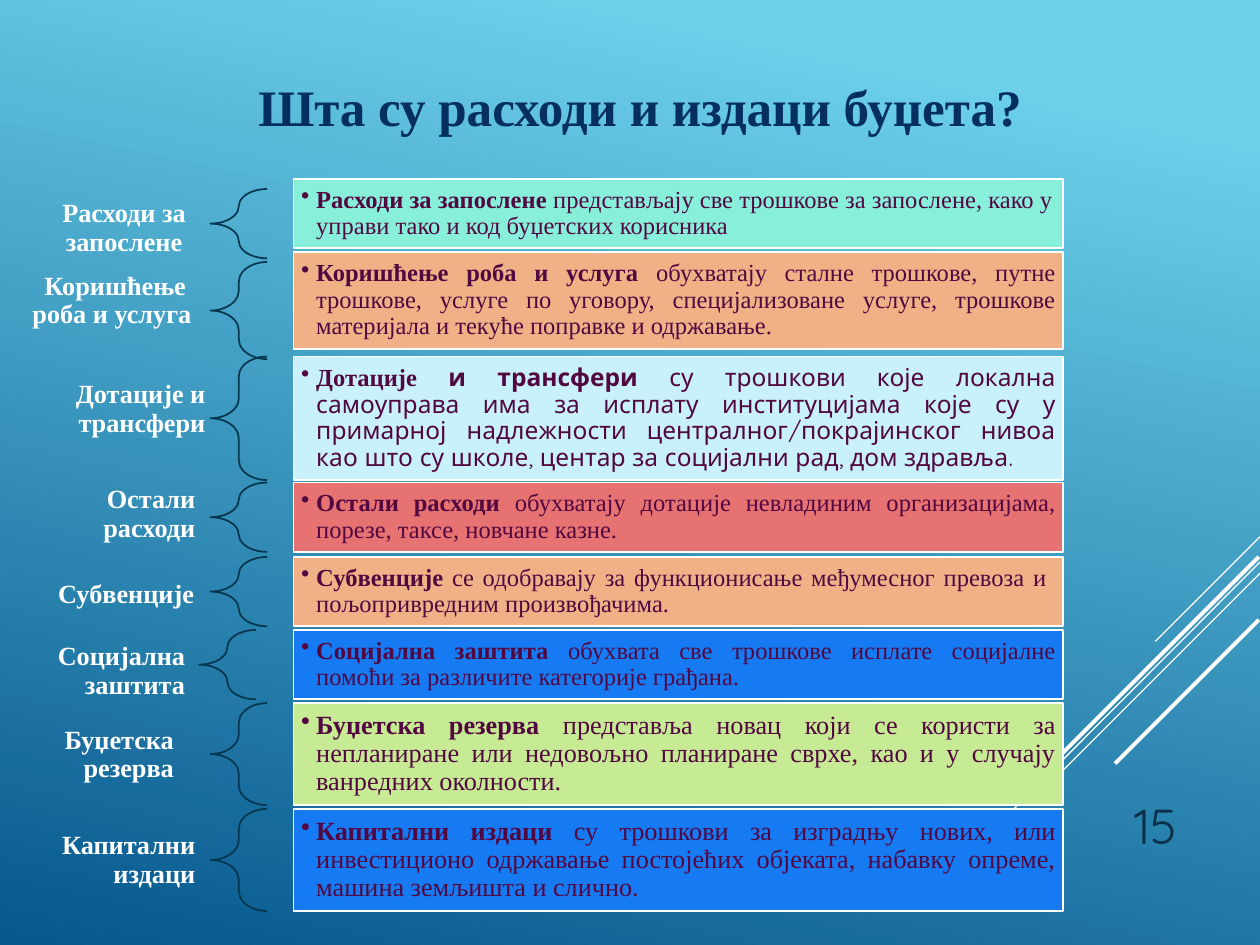
import pptx
import pptx.util
import pptx.dml.color
import pptx.enum.shapes
import pptx.enum.text
import pptx.oxml.ns
import lxml.etree

Inches = pptx.util.Inches
Pt = pptx.util.Pt
RGBColor = pptx.dml.color.RGBColor
Shape = pptx.enum.shapes.MSO_SHAPE
Align = pptx.enum.text.PP_ALIGN
Anchor = pptx.enum.text.MSO_ANCHOR
qn = pptx.oxml.ns.qn

WHITE = RGBColor(0xFF, 0xFF, 0xFF)
NAVY = RGBColor(0x05, 0x2F, 0x61)
INK = RGBColor(0x0A, 0x30, 0x4A)
TEAL = RGBColor(0x04, 0x36, 0x4E)
PLUM = RGBColor(0x52, 0x07, 0x41)
SKY = RGBColor(0x6E, 0xD2, 0xEB)
DEEP = RGBColor(0x06, 0x58, 0x8E)
MINT = RGBColor(0x87, 0xEF, 0xDA)
PEACH = RGBColor(0xF1, 0xB1, 0x87)
ICE = RGBColor(0xC8, 0xF1, 0xFB)
CORAL = RGBColor(0xE6, 0x72, 0x72)
BLUE = RGBColor(0x16, 0x7B, 0xF3)
LIME = RGBColor(0xC7, 0xEA, 0x94)

SERIF = "Times New Roman"
SANS = "Quicksand"
BAR_PAD = (0.06, 0.06, 0.06, 0.06)
TAG_PAD = (0.12, 0.04, 0.12, 0.04)

STRIPES = [
    (10, 4.26, 9.17, 5.09, 0.75),
    (10, 4.46, 7.3, 7.17, 0.75),
    (10, 4.55, 8.28, 6.27, 0.75),
    (9.99, 4.42, 8.42, 5.99, 2.25),
    (9.99, 4.92, 8.85, 6.06, 2.25),
]

BARS = [
    (1.42, 0.55, MINT, 14, Align.LEFT, [
        ("Расходи за запослене ", True, SERIF),
        ("представљају све трошкове за запослене, како у управи тако и код "
         "буџетских корисника", False, SERIF)]),
    (2, 0.77, PEACH, 14, Align.JUSTIFY, [
        ("Коришћење роба и услуга ", True, SERIF),
        ("обухватају сталне трошкове, путне трошкове, услуге по уговору, "
         "специјализоване услуге, трошкове материјала и текуће поправке и "
         "одржавање.", False, SERIF)]),
    (2.83, 0.98, ICE, 14, Align.JUSTIFY, [
        ("Дотације", True, SERIF),
        (" и трансфери ", True, SANS),
        ("су трошкови које локална самоуправа има за исплату институцијама "
         "које су у примарној надлежности централног/покрајинског нивоа као "
         "што су школе, центар за социјални рад, дом здравља. ", False, SANS)]),
    (3.83, 0.55, CORAL, 14, Align.JUSTIFY, [
        ("Остали расходи ", True, SERIF),
        ("обухватају дотације невладиним организацијама, порезе, таксе, "
         "новчане казне.", False, SERIF)]),
    (4.42, 0.55, PEACH, 14, Align.JUSTIFY, [
        ("Субвенције", True, SERIF),
        (" сe одобравају за функционисање међумесног превоза и  "
         "пољопривредним произвођачима. ", False, SERIF)]),
    (5, 0.55, BLUE, 14, Align.JUSTIFY, [
        ("Социјална заштита ", True, SERIF),
        ("обухвата све трошкове исплате социјалне помоћи за различите "
         "категорије грађана.", False, SERIF)]),
    (5.58, 0.81, LIME, 15, Align.JUSTIFY, [
        ("Буџетска резерва ", True, SERIF),
        ("представља новац који се користи за непланиране или недовољно "
         "планиране сврхе, као и у случају ванредних околности.", False, SERIF)]),
    (6.42, 0.81, BLUE, 15, Align.JUSTIFY, [
        ("Капитални издаци ", True, SERIF),
        ("су трошкови за изградњу нових, или инвестиционо одржавање "
         "постојећих објеката, набавку опреме, машина земљишта и слично.",
         False, SERIF)]),
]

BRACES = [(1.67, 1.5), (1.67, 2.08), (1.67, 2.83), (1.67, 3.83),
          (1.67, 4.42), (1.58, 5), (1.67, 5.58), (1.67, 6.42)]

TAGS = [
    ("Расходи за запослене", (0.3, 1.71, 1.37, 0.21), Align.CENTER),
    ("Коришћење роба и услуга ", (0, 2.15, 1.83, 0.48), Align.CENTER),
    ("Дотације и трансфери", (0, 3.16, 1.75, 0.18), Align.RIGHT),
    ("Остали расходи", (0, 3.92, 1.67, 0.33), Align.RIGHT),
    ("Субвенције", (0.11, 4.61, 1.55, 0.22), Align.RIGHT),
    ("Социјална заштита", (0.06, 5.17, 1.53, 0.32), Align.RIGHT),
    ("Буџетска резерва", (0.05, 5.83, 1.45, 0.32), Align.RIGHT),
    ("Капитални издаци", (0.12, 6.67, 1.55, 0.32), Align.RIGHT),
]


def apply(item, form):
    for name, value in form.items():
        setattr(item, name, value)


def write(shape, runs, size, color, align, anchor=Anchor.MIDDLE, pad=None, space=None):
    frame = shape.text_frame
    apply(frame, {"word_wrap": True, "vertical_anchor": anchor})
    if pad:
        sides = ("margin_left", "margin_top", "margin_right", "margin_bottom")
        apply(frame, {side: Inches(gap) for side, gap in zip(sides, pad)})
    para = frame.paragraphs[0]
    apply(para, {"alignment": align, "line_spacing": space})
    for text, bold, face in runs:
        run = para.add_run()
        run.text = text
        apply(run.font, {"size": Pt(size), "bold": bold, "name": face})
        run.font.color.rgb = color
    return para


def add_text(slide, box, *args, **form):
    shape = slide.shapes.add_textbox(*map(Inches, box))
    write(shape, *args, **form)


def add_stripe(slide, x1, y1, x2, y2, width):
    line = slide.shapes.add_connector(
        pptx.enum.shapes.MSO_CONNECTOR.STRAIGHT, *map(Inches, (x1, y1, x2, y2)))
    line.line.color.rgb = WHITE
    line.line.width = Pt(width)
    lxml.etree.SubElement(line._element.spPr, qn("a:effectLst"))


def add_shape(slide, kind, box, edge):
    shape = slide.shapes.add_shape(kind, *map(Inches, box))
    shape.shadow.inherit = False
    shape.line.color.rgb = edge
    shape.line.width = Pt(1)
    return shape


def add_brace(slide, left, top, height):
    brace = add_shape(slide, Shape.LEFT_BRACE, (left, top, 0.45, height), TEAL)
    brace.fill.background()
    brace.adjustments[0] = 0.35
    brace.adjustments[1] = 0.5


def add_bar(slide, top, height, color, size, align, runs):
    bar = add_shape(slide, Shape.RECTANGLE, (2.33, top, 6.11, height), WHITE)
    bar.fill.solid()
    bar.fill.fore_color.rgb = color
    para = write(bar, runs, size, PLUM, align, pad=BAR_PAD, space=0.9)
    props = para._p.get_or_add_pPr()
    props.set("marL", str(Inches(0.12)))
    props.set("indent", str(Inches(-0.12)))
    lxml.etree.SubElement(props, qn("a:buChar")).set("char", "•")


def paint(slide):
    fill = slide.background.fill
    fill.gradient()
    fill.gradient_angle = 258
    for stop, place, color in zip(fill.gradient_stops, (0.1, 1), (SKY, DEEP)):
        stop.position = place
        stop.color.rgb = color


def main():
    deck = pptx.Presentation()
    apply(deck, {"slide_width": Inches(10), "slide_height": Inches(7.5)})
    slide = deck.slides.add_slide(deck.slide_layouts[6])
    paint(slide)
    for stripe in STRIPES:
        add_stripe(slide, *stripe)
    add_text(slide, (8.5, 6.1, 0.94, 0.73), [("15", False, SANS)], 28, INK,
             Align.RIGHT, anchor=Anchor.BOTTOM)
    add_text(slide, (0.58, 0.5, 9, 0.68),
             [("Шта су расходи и издаци буџета?", True, SERIF)], 29.2, NAVY, Align.CENTER)
    for bar, (left, top), (text, box, align) in zip(BARS, BRACES, TAGS):
        add_brace(slide, left, top, bar[1])
        add_bar(slide, *bar)
        add_text(slide, box, [(text, True, SERIF)], 15, WHITE, align,
                 pad=TAG_PAD, space=0.9)
    deck.save("out.pptx")


if __name__ == "__main__":
    main()
